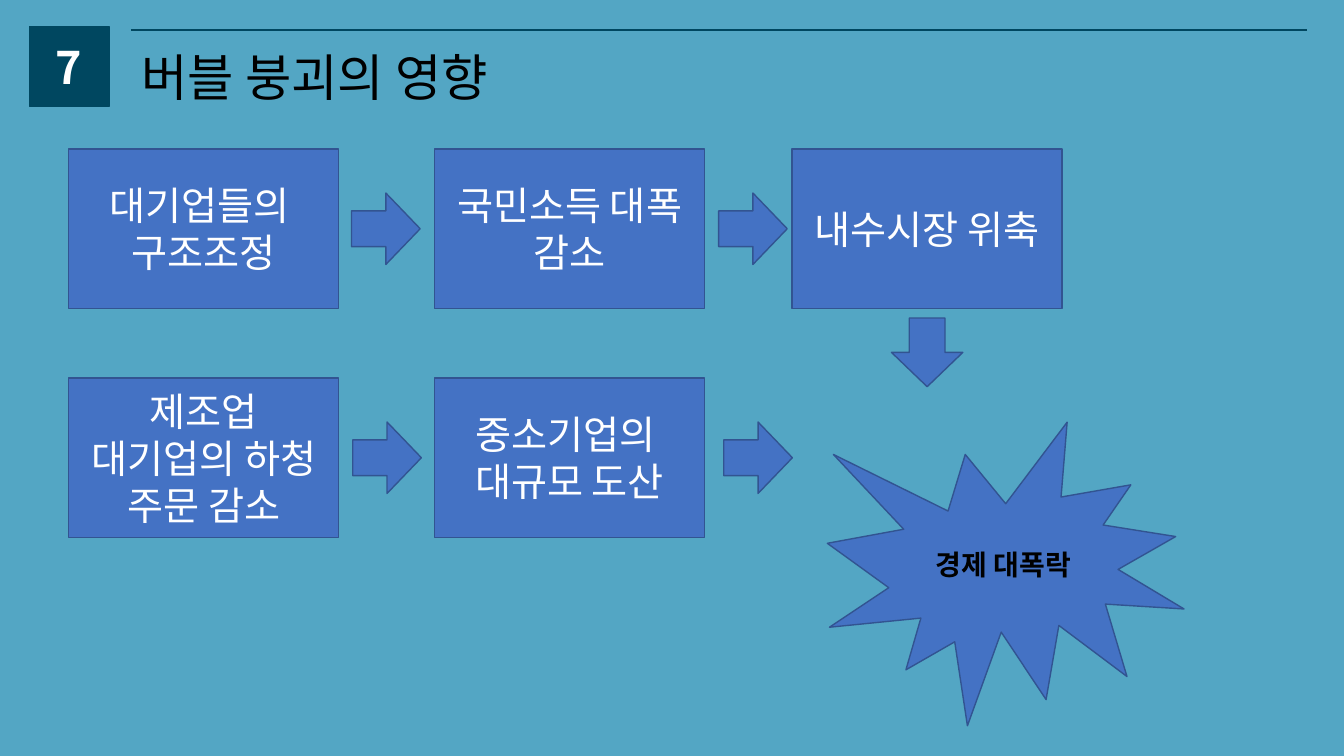
from dataclasses import dataclass

from lxml import etree
from pptx import Presentation
from pptx.dml.color import RGBColor
from pptx.enum.shapes import MSO_CONNECTOR, MSO_SHAPE
from pptx.enum.text import MSO_ANCHOR, MSO_AUTO_SIZE, PP_ALIGN
from pptx.oxml.ns import qn
from pptx.util import Cm, Pt

RECT = MSO_SHAPE.RECTANGLE
ARROW = MSO_SHAPE.RIGHT_ARROW
BURST = MSO_SHAPE.EXPLOSION1
STRAIGHT = MSO_CONNECTOR.STRAIGHT
MIDDLE, TOP = MSO_ANCHOR.MIDDLE, MSO_ANCHOR.TOP
CENTER, LEFT = PP_ALIGN.CENTER, PP_ALIGN.LEFT
NO_FIT = MSO_AUTO_SIZE.NONE


@dataclass(frozen=True)
class Theme:
    font: str = "Noto Sans CJK KR"
    back: str = "53A6C4"
    dark: str = "004760"
    fill: str = "4472C4"
    edge: str = "325491"
    white: str = "FFFFFF"
    black: str = "000000"
    title: int = 36
    number: int = 32
    step: int = 28
    burst: int = 20


@dataclass(frozen=True)
class Box:
    left: float
    top: float
    width: float
    height: float

    def place(self) -> tuple:
        return Cm(self.left), Cm(self.top), Cm(self.width), Cm(self.height)


@dataclass(frozen=True)
class Step:
    col: int
    row: int
    text: str


@dataclass(frozen=True)
class Link:
    left: float
    top: float
    turn: int = 0


THEME = Theme()

# Grid of steps, in centimetres
COLS = (1.73, 10.95, 19.96)
ROWS = (3.76, 9.53)
STEP_W, STEP_H = 6.81, 4.01
LINK_W, LINK_H = 1.73, 1.8
DROP = (STEP_H - LINK_H) / 2

STEPS = (
    Step(0, 0, "대기업들의 \n구조조정"),
    Step(1, 0, "국민소득 대폭 감소"),
    Step(2, 0, "내수시장 위축"),
    Step(0, 1, "제조업 대기업의 하청 주문 감소"),
    Step(1, 1, "중소기업의 \n대규모 도산"),
)
LINKS = (
    Link(8.86, ROWS[0] + DROP),
    Link(8.89, ROWS[1] + DROP),
    Link(18.11, ROWS[0] + DROP),
    Link(COLS[2] + (STEP_W - LINK_W) / 2, 7.98, 90),
    Link(18.24, ROWS[1] + DROP),
)


def color(code: str) -> RGBColor:
    return RGBColor.from_string(code)


def write(shape, text: str, size: int, ink: str, bold: bool = False,
          align=CENTER, anchor=MIDDLE) -> None:
    frame = shape.text_frame
    frame.text = text
    frame.word_wrap = True
    frame.auto_size = NO_FIT
    frame.vertical_anchor = anchor
    for para in frame.paragraphs:
        para.alignment = align
        font = para.font
        font.name, font.size, font.bold = THEME.font, Pt(size), bold
        font.color.rgb = color(ink)
        # Hangul takes the East Asian typeface
        props = para._p.pPr.find(qn("a:defRPr"))
        latin = props.find(qn("a:latin"))
        east = etree.Element(qn("a:ea"), typeface=THEME.font)
        latin.addnext(east)


def draw(slide, kind, box: Box, fill: str = THEME.fill, edge: str = THEME.edge):
    shape = slide.shapes.add_shape(kind, *box.place())
    shape.shadow.inherit = False
    shape.fill.solid()
    shape.fill.fore_color.rgb = color(fill)
    shape.line.color.rgb = color(edge)
    shape.line.width = Pt(1)
    return shape


def rule(slide, left: float, right: float, top: float) -> None:
    line = slide.shapes.add_connector(
        STRAIGHT, Cm(left), Cm(top), Cm(right), Cm(top))
    line.line.color.rgb = color(THEME.dark)
    line.line.width = Pt(1.5)
    etree.SubElement(line._element.spPr, qn("a:effectLst"))


def main() -> None:
    deck = Presentation()
    deck.slide_width, deck.slide_height = Cm(33.87), Cm(19.05)
    slide = deck.slides.add_slide(deck.slide_layouts[5])
    slide.background.fill.solid()
    slide.background.fill.fore_color.rgb = color(THEME.back)

    # Header
    badge = draw(slide, RECT, Box(0.74, 0.67, 2.01, 2.01), THEME.dark, THEME.dark)
    write(badge, "7", THEME.number, THEME.white, bold=True)
    rule(slide, 3.3, 32.94, 0.76)
    title = slide.shapes.title
    title.left, title.top, title.width, title.height = Box(
        3.3, 1.04, 10.57, 1.8).place()
    write(title, "버블 붕괴의 영향", THEME.title, THEME.black,
          align=LEFT, anchor=TOP)

    # Steps
    for step in STEPS:
        box = Box(COLS[step.col], ROWS[step.row], STEP_W, STEP_H)
        write(draw(slide, RECT, box), step.text, THEME.step, THEME.white)

    # Arrows
    for link in LINKS:
        arrow = draw(slide, ARROW, Box(link.left, link.top, LINK_W, LINK_H))
        arrow.rotation = link.turn

    # Outcome
    burst = draw(slide, BURST, Box(20.85, 10.64, 8.99, 7.65))
    write(burst, "경제 대폭락", THEME.burst, THEME.black, bold=True)

    deck.save("out.pptx")


if __name__ == "__main__":
    main()
